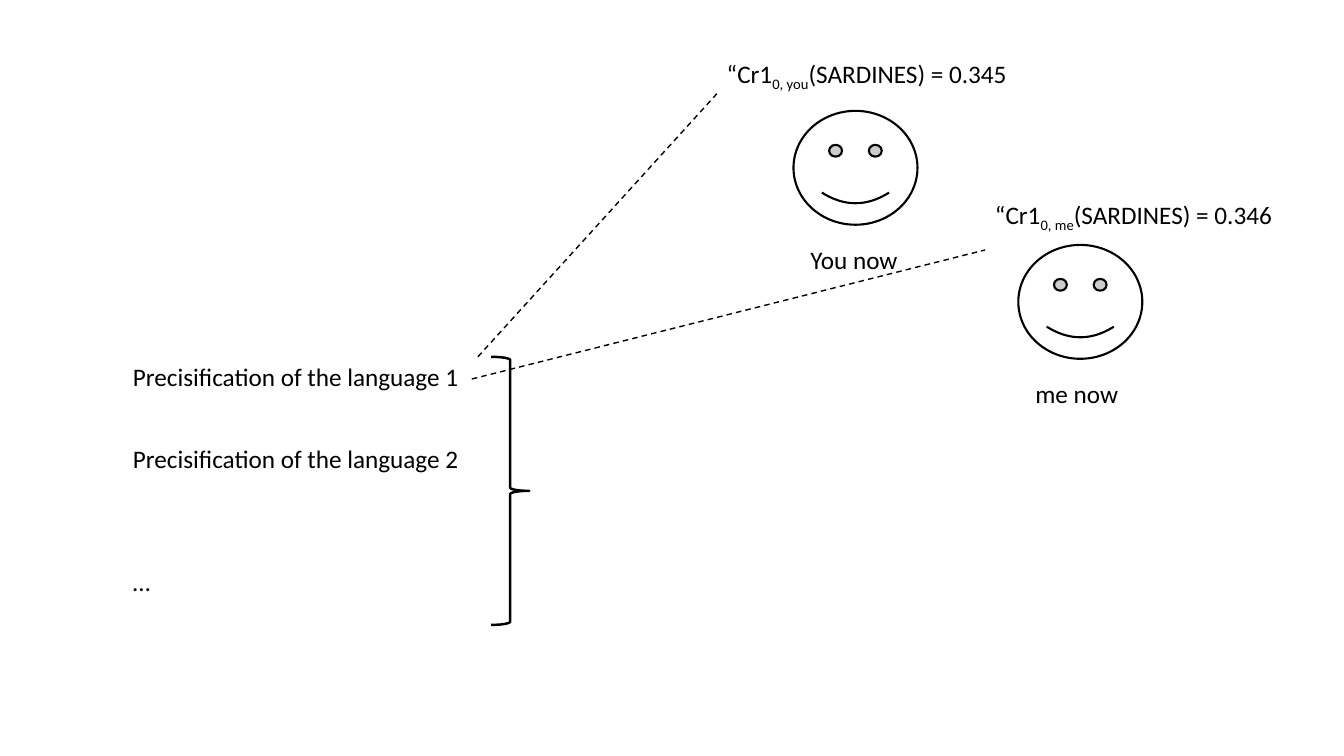
from pptx import Presentation
from pptx.dml.color import RGBColor
from pptx.enum.dml import MSO_LINE_DASH_STYLE as Dash
from pptx.enum.shapes import MSO_CONNECTOR as Connector, MSO_SHAPE as Shape
from pptx.enum.text import MSO_AUTO_SIZE as AutoSize
from pptx.oxml.ns import qn
from pptx.util import Emu, Pt
from lxml import etree

EMU_PER_PX = 9144  # 100 px to the inch
BLACK = "000000"
WHITE = "FFFFFF"
FONT = "Calibri"
TEXT_HEIGHT = 40


def px(*lengths):
    return [Emu(length * EMU_PER_PX) for length in lengths]


def paint(color_format, hex_color):
    color_format.rgb = RGBColor.from_string(hex_color)


def set_line(line, points):
    paint(line.color, BLACK)
    line.width = Pt(points)


def add_text(slide, left, top, width, *parts):
    """Write the parts on one line; every second part is a subscript."""
    box = slide.shapes.add_textbox(*px(left, top, width, TEXT_HEIGHT))
    frame = box.text_frame
    frame.word_wrap = True
    frame.auto_size = AutoSize.SHAPE_TO_FIT_TEXT
    for index, part in enumerate(parts):
        span = frame.paragraphs[0].add_run()
        span.text = part
        span.font.name = FONT
        span.font.size = Pt(18)
        paint(span.font.color, BLACK)
        if index % 2:
            span.font._element.set("baseline", "-25000")


def add_outline(slide, kind, left, top, width, height, points, fill=None):
    shape = slide.shapes.add_shape(kind, *px(left, top, width, height))
    shape.shadow.inherit = False
    if fill:
        shape.fill.solid()
        paint(shape.fill.fore_color, fill)
    else:
        shape.fill.background()
    set_line(shape.line, points)


def add_person(slide, left, top, caption):
    add_outline(slide, Shape.SMILEY_FACE, left, top, 123, 113, 1.5, WHITE)
    add_text(slide, left + 7, top + 127, 145, caption)


def add_credence(slide, left, top, width, person, value):
    add_text(slide, left, top, width,
             "“Cr1", f"0, {person}", f"(SARDINES) = {value}")


def add_dashed_line(slide, start, end):
    line = slide.shapes.add_connector(Connector.STRAIGHT, *px(*start, *end))
    set_line(line.line, 1)
    line.line.dash_style = Dash.DASH
    etree.SubElement(line._element.spPr, qn("a:effectLst"))


def main():
    deck = Presentation()
    deck.slide_width, deck.slide_height = px(1333, 750)
    slide = deck.slides.add_slide(deck.slide_layouts[6])

    # Precisifications, gathered by a brace
    add_text(slide, 122, 354, 859, "Precisification of the language 1")
    add_text(slide, 122, 435, 459, "Precisification of the language 2")
    add_text(slide, 122, 557, 459, "…")
    add_outline(slide, Shape.RIGHT_BRACE, 487, 354, 38, 266, 1.75)

    # The two people and their credences
    add_person(slide, 787, 110, "You now")
    add_person(slide, 1010, 243, "me now")
    add_credence(slide, 711, 53, 346, "you", "0.345")
    add_credence(slide, 977, 193, 329, "me", "0.346")

    # Links from the first precisification to each credence
    add_dashed_line(slide, (474, 354), (711, 93))
    add_dashed_line(slide, (468, 376), (977, 248))

    deck.save("out.pptx")


if __name__ == "__main__":
    main()
